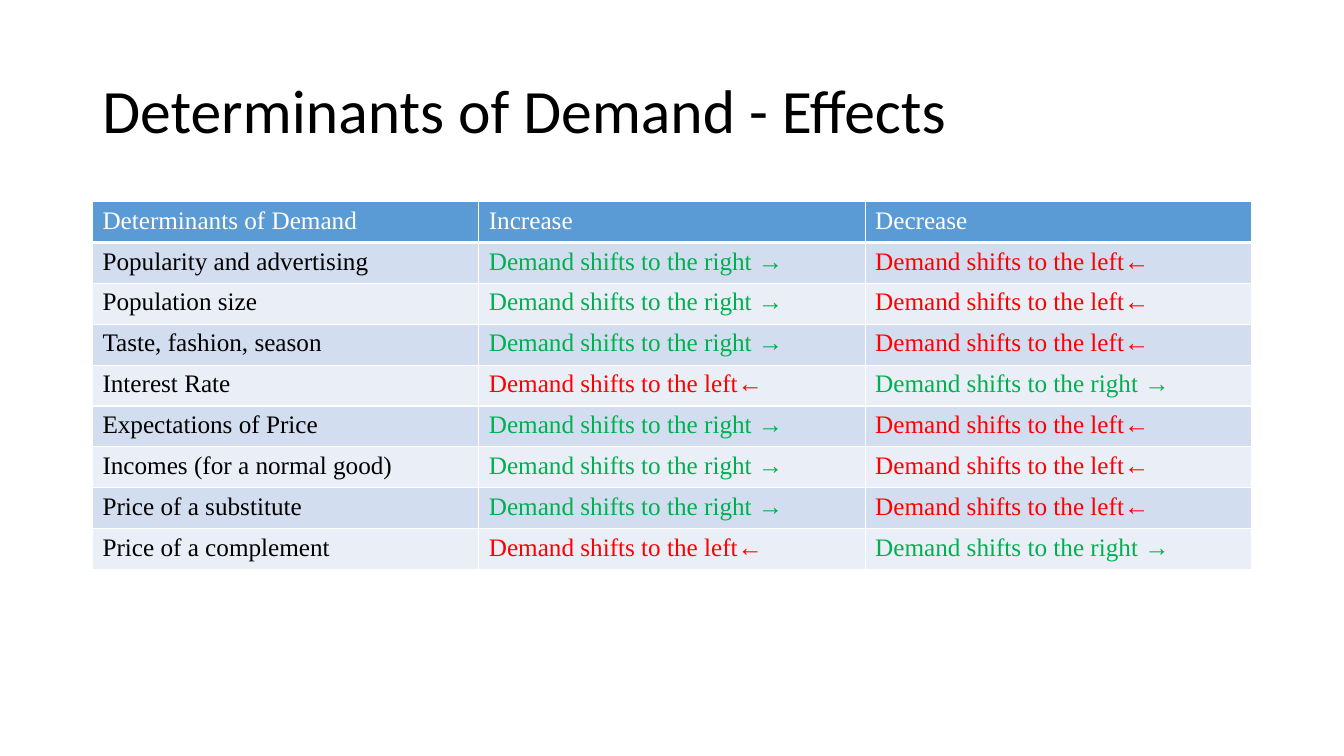
from lxml import etree
from pptx import Presentation, util as u
from pptx.dml.color import RGBColor
from pptx.enum import text
from pptx.oxml.ns import qn

# Content
TITLE = "Determinants of Demand - Effects"
HEADS = ("Determinants of Demand", "Increase", "Decrease")
RIGHT = ("Demand shifts to the right →", "green")
LEFT = ("Demand shifts to the left←", "red")
# Each factor, and whether its increase shifts demand to the right
FACTORS = [
    ("Popularity and advertising", True),
    ("Population size", True),
    ("Taste, fashion, season", True),
    ("Interest Rate", False),
    ("Expectations of Price", True),
    ("Incomes (for a normal good)", True),
    ("Price of a substitute", True),
    ("Price of a complement", False),
]
COLORS = {
    "black": "000000", "white": "FFFFFF", "green": "00B050", "red": "FF0000",
    "head": "5B9BD5", "odd": "D2DEEF", "even": "EAEFF7",
}

# Layout
EDGE, WIDTH = u.Cm(2.33), u.Cm(29.21)
TOP, ROW = u.Cm(5.08), u.Cm(1.03)


def style(para, face, size, color):
    font = para.font
    font.name, font.size, font.bold = face, u.Pt(size), False
    font.color.rgb = RGBColor.from_string(COLORS[color])


def border(cell, base):
    props = cell._tc.get_or_add_tcPr()
    for side, width in (("L", 1), ("R", 1), ("T", 1), ("B", base)):
        line = etree.SubElement(props, qn("a:ln" + side), w=str(u.Pt(width)))
        fill = etree.SubElement(line, qn("a:solidFill"))
        etree.SubElement(fill, qn("a:srgbClr"), val=COLORS["white"])


def paint(cell, words, color, fill, base=1):
    cell.text = words
    style(cell.text_frame.paragraphs[0], "Times New Roman", 18, color)
    border(cell, base)
    cell.fill.solid()
    cell.fill.fore_color.rgb = RGBColor.from_string(COLORS[fill])


def main():
    deck = Presentation()
    deck.slide_width, deck.slide_height = u.Cm(33.87), u.Cm(19.05)
    slide = deck.slides.add_slide(deck.slide_layouts[6])

    # Title
    box = slide.shapes.add_textbox(EDGE, u.Cm(1.01), WIDTH, u.Cm(3.68))
    frame = box.text_frame
    frame.word_wrap = True
    frame.vertical_anchor = text.MSO_ANCHOR.MIDDLE
    para = frame.paragraphs[0]
    para.text, para.line_spacing = TITLE, 0.9
    style(para, "Calibri", 44, "black")

    # Table
    count = len(FACTORS) + 1
    table = slide.shapes.add_table(
        count, len(HEADS), EDGE, TOP, WIDTH, ROW * count).table
    for row in table.rows:
        row.height = ROW
    for col, head in enumerate(HEADS):
        paint(table.cell(0, col), head, "white", "head", 3)
    for row, (name, direct) in enumerate(FACTORS, 1):
        shifts = (RIGHT, LEFT) if direct else (LEFT, RIGHT)
        fill = "odd" if row % 2 else "even"
        for col, (words, color) in enumerate(((name, "black"), *shifts)):
            paint(table.cell(row, col), words, color, fill)

    deck.save("out.pptx")


if __name__ == "__main__":
    main()
